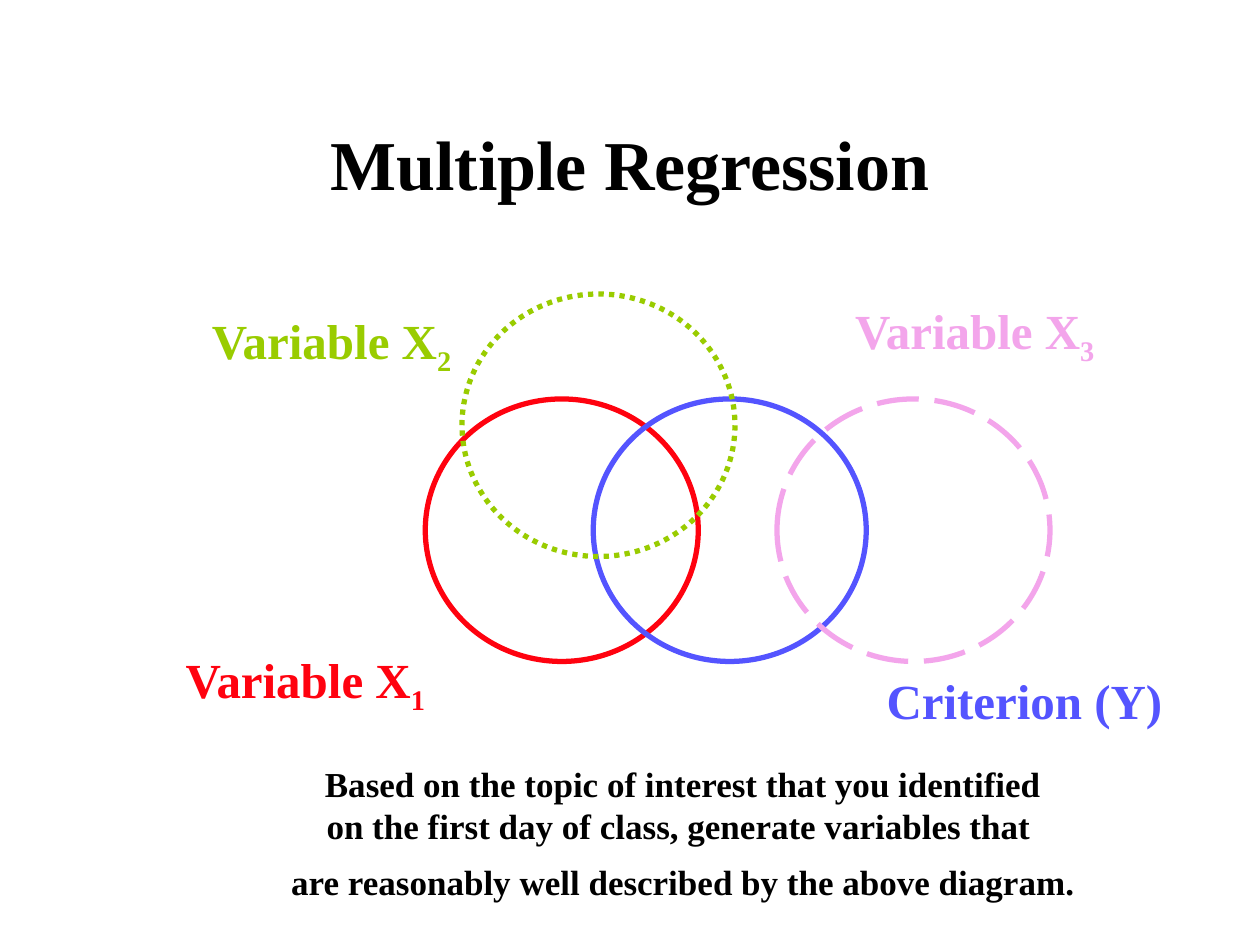
from dataclasses import dataclass

import pptx
import pptx.dml.color
import pptx.enum.dml
import pptx.enum.shapes
import pptx.enum.text
import pptx.util

Align = pptx.enum.text.PP_ALIGN
Anchor = pptx.enum.text.MSO_ANCHOR
Dash = pptx.enum.dml.MSO_LINE

# The grid divides the slide into 120 columns and 90 rows
CELL = pptx.util.Inches(10) // 120
COLUMNS, ROWS = 120, 90
CIRCLE_WIDTH, CIRCLE_HEIGHT = 26, 25
LABEL_HEIGHT = 6.85


@dataclass(frozen=True)
class Theme:
    font: str = "Times New Roman"
    ink: str = "000000"
    x1: str = "FF020F"
    x2: str = "99CC00"
    x3: str = "F3A5EB"
    criterion: str = "5454FF"
    title_size: int = 40
    label_size: int = 28
    prompt_size: int = 20
    outline: int = 3
    subscript: int = -25000


@dataclass(frozen=True)
class Circle:
    column: float
    row: float
    color: str
    dash: Dash = Dash.SOLID


@dataclass(frozen=True)
class Label:
    column: float
    row: float
    text: str
    color: str
    index: str = ""
    width: float = 26


THEME = Theme()


def grid(*cells: float) -> list[int]:
    return [round(cell * CELL) for cell in cells]


def rgb(color: str) -> pptx.dml.color.RGBColor:
    return pptx.dml.color.RGBColor.from_string(color)


def format_run(run, size: int, color: str) -> None:
    run.font.name = THEME.font
    run.font.size = pptx.util.Pt(size)
    run.font.bold = True
    run.font.color.rgb = rgb(color)


def add_text(slide, place: list[int], text: str, size: int, color: str,
             align: Align = Align.CENTER, wrap: bool = False):
    frame = slide.shapes.add_textbox(*place).text_frame
    frame.text = text
    frame.word_wrap = wrap
    for paragraph in frame.paragraphs:
        paragraph.alignment = align
        for run in paragraph.runs:
            format_run(run, size, color)
    return frame


def draw_circle(slide, circle: Circle) -> None:
    oval = slide.shapes.add_shape(
        pptx.enum.shapes.MSO_SHAPE.OVAL,
        *grid(circle.column, circle.row, CIRCLE_WIDTH, CIRCLE_HEIGHT))
    oval.shadow.inherit = False
    oval.fill.background()
    oval.line.color.rgb = rgb(circle.color)
    oval.line.width = pptx.util.Pt(THEME.outline)
    oval.line.dash_style = circle.dash


def draw_label(slide, label: Label) -> None:
    place = grid(label.column, label.row, label.width, LABEL_HEIGHT)
    frame = add_text(slide, place, label.text, THEME.label_size, label.color,
                     Align.LEFT)
    if label.index:
        index = frame.paragraphs[0].add_run()
        index.text = label.index
        format_run(index, THEME.label_size, label.color)
        index.font._element.set("baseline", str(THEME.subscript))


CIRCLES = [
    Circle(40.5, 38, THEME.x1),
    Circle(56.5, 38, THEME.criterion),
    Circle(44, 28, THEME.x2, Dash.ROUND_DOT),
    Circle(74, 38, THEME.x3, Dash.LONG_DASH),
]
LABELS = [
    Label(83.25, 63.25, "Criterion (Y)", THEME.criterion, width=28.7),
    Label(16.5, 61.25, "Variable X", THEME.x1, "1"),
    Label(19, 29, "Variable X", THEME.x2, "2"),
    Label(80.25, 28, "Variable X", THEME.x3, "3"),
]
PROMPT = (
    "Based on the topic of interest that you identified\n"
    "on the first day of class, generate variables that \n"
    "are reasonably well described by the above diagram."
)


def main() -> None:
    deck = pptx.Presentation()
    deck.slide_width, deck.slide_height = grid(COLUMNS, ROWS)
    slide = deck.slides.add_slide(deck.slide_layouts[6])

    # Title
    title = add_text(slide, grid(9, 8, 102, 15), "Multiple Regression",
                     THEME.title_size, THEME.ink, wrap=True)
    title.vertical_anchor = Anchor.MIDDLE

    # Overlapping variables and their names
    for circle in CIRCLES:
        draw_circle(slide, circle)
    for label in LABELS:
        draw_label(slide, label)

    # Task; the larger closing space sets the height of the last line
    prompt = add_text(slide, grid(26, 72, 78.1, 14.75), PROMPT,
                      THEME.prompt_size, THEME.ink)
    closing = prompt.paragraphs[-1].add_run()
    closing.text = " "
    format_run(closing, THEME.label_size, THEME.ink)

    deck.save("out.pptx")


if __name__ == "__main__":
    main()
